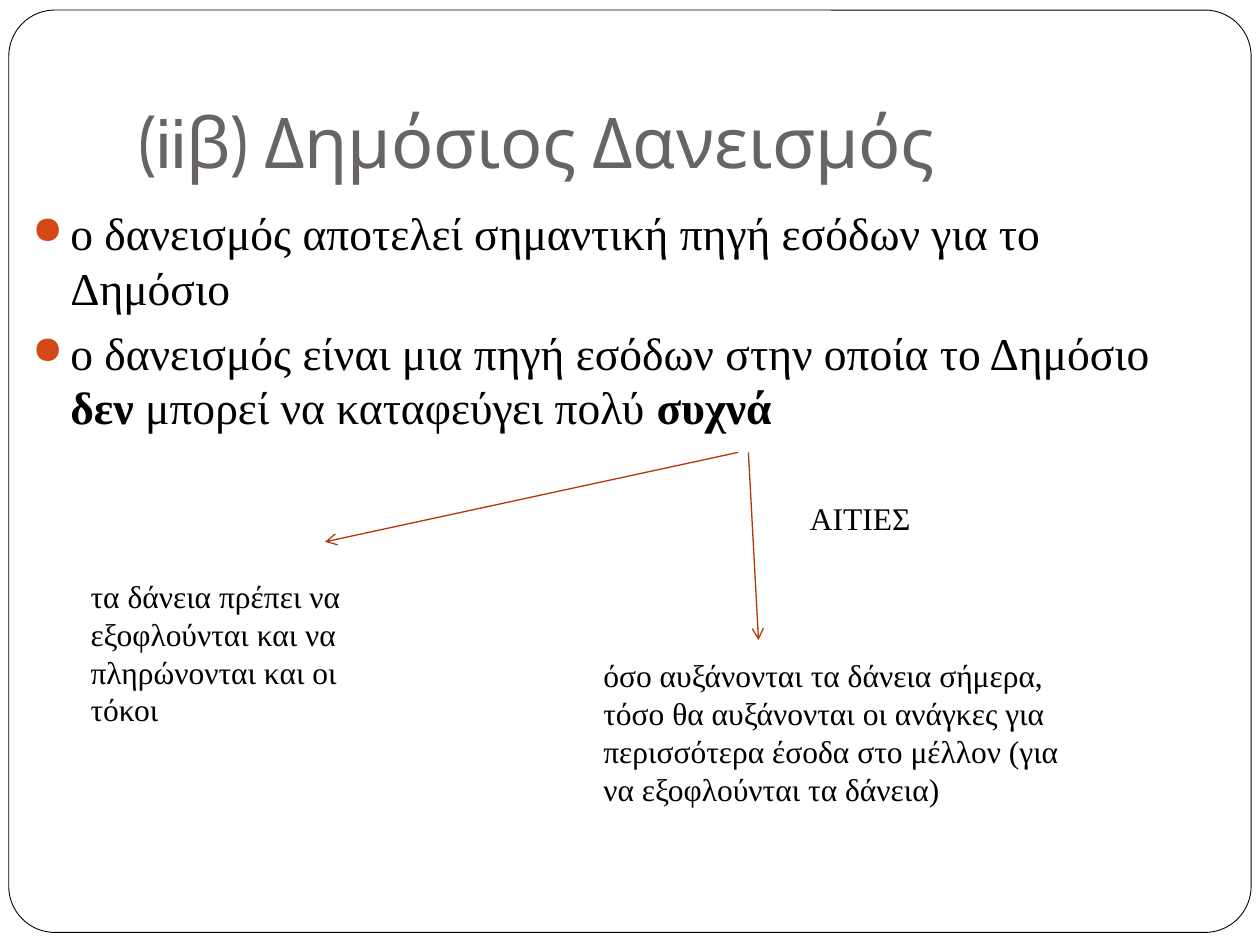
from dataclasses import dataclass

from lxml import etree
from pptx import Presentation
from pptx.dml.color import RGBColor
from pptx.enum.shapes import MSO_CONNECTOR, MSO_SHAPE
from pptx.enum.text import MSO_ANCHOR
from pptx.oxml.ns import qn
from pptx.util import Inches, Pt

ROUNDED = MSO_SHAPE.ROUNDED_RECTANGLE
STRAIGHT = MSO_CONNECTOR.STRAIGHT
TOP, BOTTOM = MSO_ANCHOR.TOP, MSO_ANCHOR.BOTTOM


@dataclass(frozen=True)
class Theme:
    title_font: str = "Cabin"
    body_font: str = "Times New Roman"
    title_size: int = 40
    body_size: int = 26
    note_size: int = 18
    paper: str = "FFFFFF"
    ink: str = "000000"
    title: str = "696464"
    bullet: str = "D34817"
    arrow: str = "B1360B"


THEME = Theme()


def rgb(value):
    return RGBColor.from_string(value)


def add_frame(slide, x, y, w, h):
    sp = slide.shapes.add_shape(ROUNDED, Inches(x), Inches(y), Inches(w), Inches(h))
    sp.adjustments[0] = 0.05
    sp.shadow.inherit = False
    sp.fill.solid()
    sp.fill.fore_color.rgb = rgb(THEME.paper)
    sp.line.color.rgb = rgb(THEME.ink)
    sp.line.width = Pt(0.5)


def add_bullet(p):
    pPr = p._p.get_or_add_pPr()
    pPr.set("marL", str(Inches(0.3)))
    pPr.set("indent", str(-Inches(0.3)))
    color = etree.SubElement(pPr, qn("a:buClr"))
    etree.SubElement(color, qn("a:srgbClr"), val=THEME.bullet)
    etree.SubElement(pPr, qn("a:buSzPct"), val="85000")
    etree.SubElement(pPr, qn("a:buChar"), char="●")


def add_text(slide, paragraphs, x, y, w, h, size=THEME.note_size,
             font=THEME.body_font, color=THEME.ink, anchor=TOP,
             bottom=0.05, before=0, bullets=False):
    tf = slide.shapes.add_textbox(Inches(x), Inches(y), Inches(w), Inches(h)).text_frame
    tf.word_wrap = True
    tf.vertical_anchor = anchor
    tf.margin_bottom = Inches(bottom)
    for i, runs in enumerate(paragraphs):
        p = tf.add_paragraph() if i else tf.paragraphs[0]
        p.space_before = Pt(before)
        if bullets:
            add_bullet(p)
        for text, bold in runs:
            r = p.add_run()
            r.text = text
            r.font.size = Pt(size)
            r.font.name = font
            r.font.bold = bold
            r.font.color.rgb = rgb(color)


def add_arrow(slide, x1, y1, x2, y2):
    line = slide.shapes.add_connector(STRAIGHT, Inches(x1), Inches(y1), Inches(x2), Inches(y2))
    line.line.color.rgb = rgb(THEME.arrow)
    line.line.width = Pt(0.75)
    etree.SubElement(line.line._get_or_add_ln(), qn("a:tailEnd"), type="arrow")
    etree.SubElement(line._element.spPr, qn("a:effectLst"))


def main():
    prs = Presentation()
    prs.slide_width, prs.slide_height = Inches(10), Inches(7.5)
    slide = prs.slides.add_slide(prs.slide_layouts[6])

    add_frame(slide, 0.07, 0.08, 9.86, 7.32)
    add_text(slide, [[("(iiβ) Δημόσιος Δανεισμός", False)]], 1, 0.3, 8.5, 1.25,
             size=THEME.title_size, font=THEME.title_font, color=THEME.title,
             anchor=BOTTOM, bottom=0.1)

    points = [
        [("ο δανεισμός αποτελεί σημαντική πηγή εσόδων για το Δημόσιο", False)],
        [("ο δανεισμός είναι μια πηγή εσόδων στην οποία το Δημόσιο ", False),
         ("δεν", True), (" μπορεί να καταφεύγει πολύ ", False), ("συχνά", True)],
    ]
    add_text(slide, points, 0.16, 1.58, 9.34, 5, size=THEME.body_size,
             before=5.8, bullets=True)

    add_arrow(slide, 5.86, 3.59, 2.58, 4.3)
    add_arrow(slide, 5.94, 3.59, 6.02, 5.08)

    notes = [
        ("τα δάνεια πρέπει να εξοφλούνται και να πληρώνονται και οι τόκοι",
         0.62, 4.53, 2.42, 1.31),
        ("όσο αυξάνονται τα δάνεια σήμερα, τόσο θα αυξάνονται οι ανάγκες για "
         "περισσότερα έσοδα στο μέλλον (για να εξοφλούνται τα δάνεια)",
         4.69, 5.16, 3.91, 1.62),
        ("ΑΙΤΙΕΣ", 6.33, 3.91, 1.48, 0.4),
    ]
    for text, *box in notes:
        add_text(slide, [[(text, False)]], *box)

    prs.save("out.pptx")


if __name__ == "__main__":
    main()
